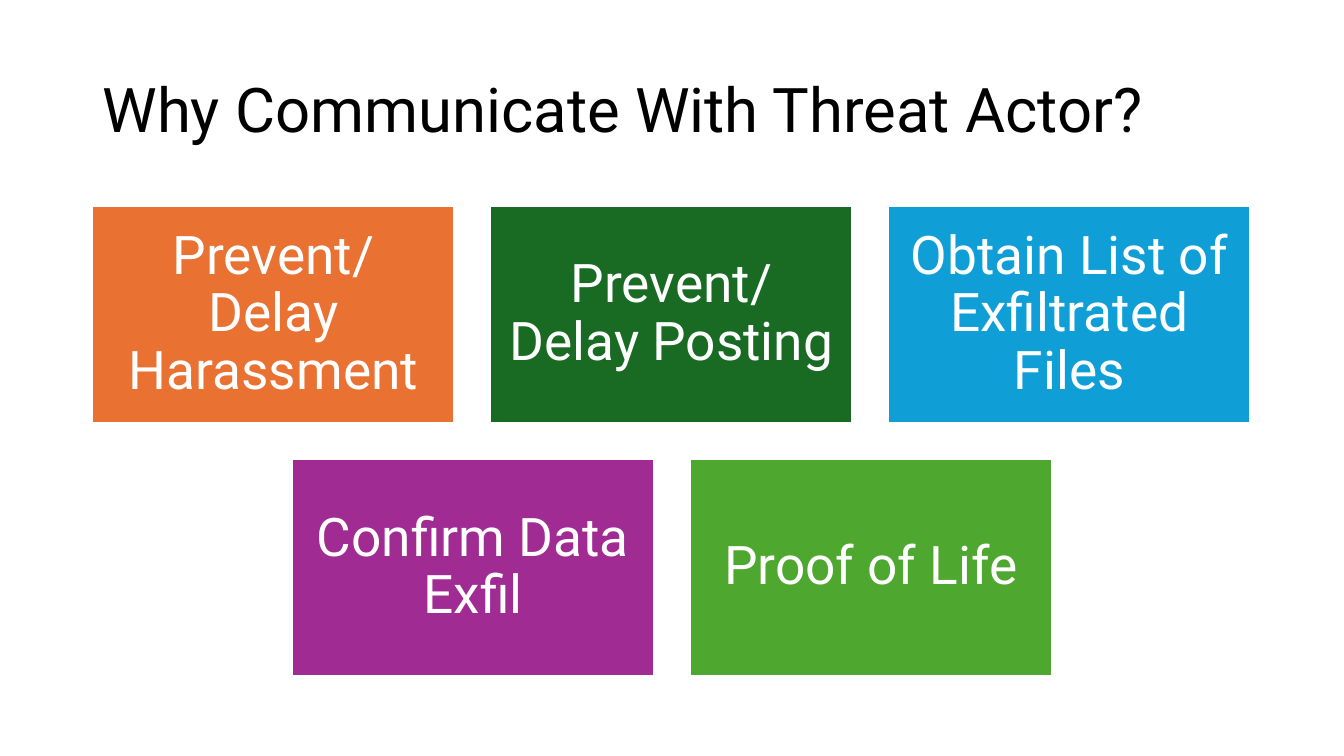
from pptx import Presentation
from pptx.dml.color import RGBColor
from pptx.enum.shapes import MSO_SHAPE
from pptx.enum.text import MSO_ANCHOR, MSO_AUTO_SIZE, PP_ALIGN
from pptx.util import Emu, Pt

PX = 9525  # 96 px to the inch
SLIDE_W, SLIDE_H = 1280, 720
CARD_W, CARD_H, GAP = 345, 207, 34
CARDS_TOP = 196
INSET = 15

ROWS = [
    [
        ("Prevent/Delay Harassment", "E97132"),
        ("Prevent/Delay Posting", "196B24"),
        ("Obtain List of Exfiltrated Files", "0F9ED5"),
    ],
    [
        ("Confirm Data Exfil", "A02B93"),
        ("Proof of Life", "4EA72E"),
    ],
]


def px(n):
    return Emu(n * PX)


def set_text(tf, text, size, color, align):
    tf.word_wrap = True
    tf.auto_size = MSO_AUTO_SIZE.NONE
    tf.vertical_anchor = MSO_ANCHOR.MIDDLE
    tf.text = text
    p = tf.paragraphs[0]
    p.alignment = align
    p.line_spacing = 0.9
    p.font.name = "Roboto"
    p.font.size = Pt(size)
    p.font.color.rgb = RGBColor.from_string(color)


prs = Presentation()
prs.slide_width, prs.slide_height = px(SLIDE_W), px(SLIDE_H)
s = prs.slides.add_slide(prs.slide_layouts[5])

title = s.shapes.title
title.left, title.top, title.width, title.height = px(88), px(38), px(1104), px(139)
set_text(title.text_frame, "Why Communicate With Threat Actor?", 44, "000000", PP_ALIGN.LEFT)

for row, cards in enumerate(ROWS):
    row_w = len(cards) * (CARD_W + GAP) - GAP
    left = (SLIDE_W - row_w) // 2
    top = CARDS_TOP + row * (CARD_H + GAP)
    for col, (text, color) in enumerate(cards):
        sp = s.shapes.add_shape(MSO_SHAPE.RECTANGLE, px(left + col * (CARD_W + GAP)),
                                px(top), px(CARD_W), px(CARD_H))
        sp.shadow.inherit = False
        sp.fill.solid()
        sp.fill.fore_color.rgb = RGBColor.from_string(color)
        sp.line.color.rgb = RGBColor.from_string("FFFFFF")
        sp.line.width = Pt(1.5)
        tf = sp.text_frame
        tf.margin_left = tf.margin_right = tf.margin_top = tf.margin_bottom = px(INSET)
        set_text(tf, text, 38, "FFFFFF", PP_ALIGN.CENTER)

prs.save("out.pptx")
